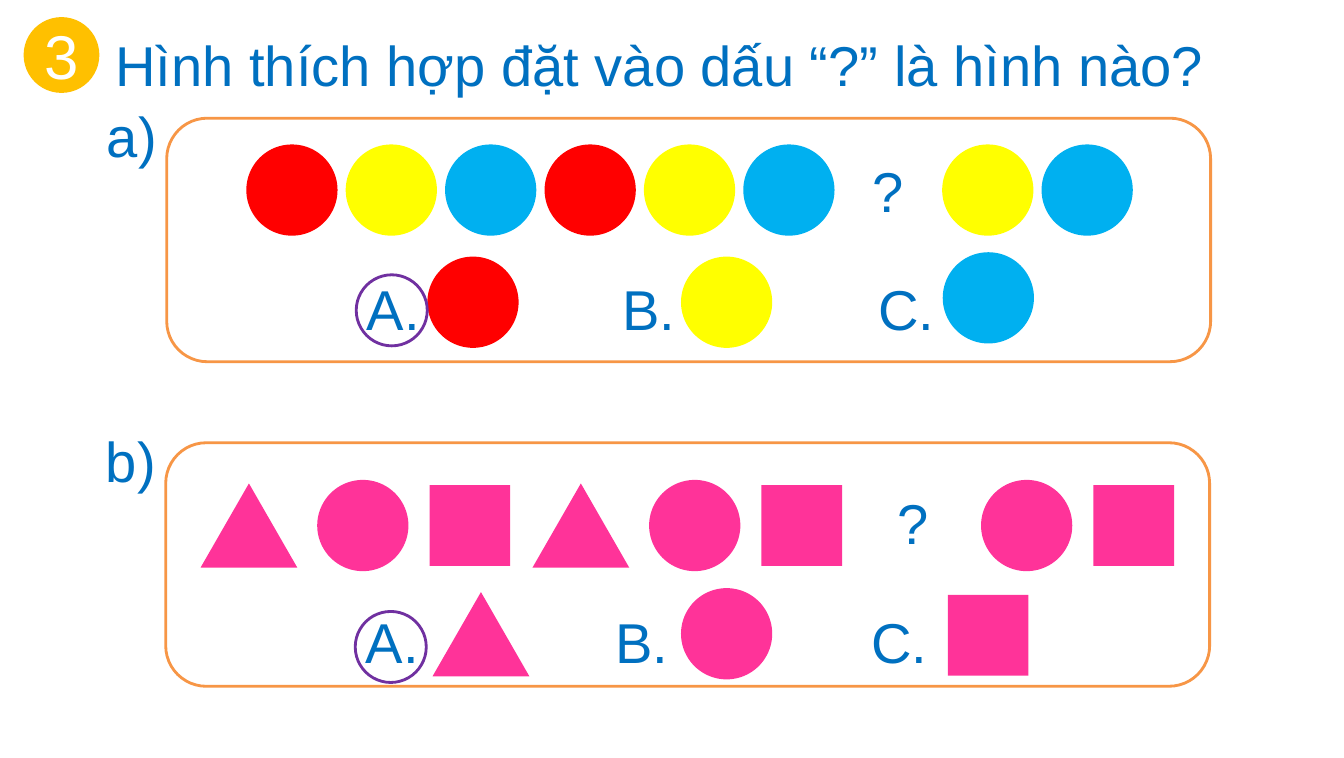
from pptx import Presentation
from pptx.dml.color import RGBColor
from pptx.enum import shapes, text
from pptx.util import Pt

BLUE, WHITE, PINK = "0070C0", "FFFFFF", "FF3399"
RED, YELLOW, SKY = "FF0000", "FFFF00", "00B0F0"
SHAPE = shapes.MSO_SHAPE
CIRCLE, TRIANGLE, SQUARE = SHAPE.OVAL, SHAPE.ISOSCELES_TRIANGLE, SHAPE.RECTANGLE
SIZES = {CIRCLE: (65, 65), TRIANGLE: (69, 60), SQUARE: (57.5, 57.5)}


def rgb(color):
    """Turn a hex string into a colour."""
    return RGBColor.from_string(color)


def add_run(p, words, size, color):
    """Add one Arial run to a paragraph."""
    r = p.add_run()
    r.text = words
    r.font.name, r.font.size = "Arial", Pt(size)
    r.font.color.rgb = rgb(color)


def add_shape(s, kind, x, y, w, h, fill=None, line=None):
    """Add a flat preset shape with optional fill and outline."""
    sp = s.shapes.add_shape(kind, Pt(x), Pt(y), Pt(w), Pt(h))
    sp.shadow.inherit = False
    if fill:
        sp.fill.solid()
        sp.fill.fore_color.rgb = rgb(fill)
    else:
        sp.fill.background()
    if line:
        sp.line.color.rgb, sp.line.width = rgb(line), Pt(2)
    else:
        sp.line.fill.background()
    return sp


def add_symbol(s, kind, color, cx, cy):
    """Add a pattern symbol centred on a point."""
    w, h = SIZES[kind]
    return add_shape(s, kind, cx - w / 2, cy - h / 2, w, h, color)


def add_centred(sp, words, size, color):
    """Write centred words inside a shape."""
    tf = sp.text_frame
    tf.vertical_anchor = text.MSO_ANCHOR.MIDDLE
    p = tf.paragraphs[0]
    p.alignment = text.PP_ALIGN.CENTER
    add_run(p, words, size, color)


def add_label(s, words, x, y, w=74):
    """Add a blue 40-point line of text."""
    tf = s.shapes.add_textbox(Pt(x), Pt(y), Pt(w), Pt(55.7)).text_frame
    tf.word_wrap = True
    p = tf.paragraphs[0]
    p.alignment = text.PP_ALIGN.JUSTIFY
    add_run(p, words, 40, BLUE)


def add_heading(s, x, y):
    """Add the numbered badge and the question."""
    badge = add_shape(s, CIRCLE, x, y, 54, 54, "FFC000")
    add_centred(badge, "3", 44, WHITE)
    add_label(s, "Hình thích hợp đặt vào dấu “?” là hình nào?", x + 58.3, y + 6, 860)


def add_panel(s, x, y, letter, symbols, centres, period, row_y, gap_y, labels, label_y,
              answers, ring_y):
    """Add a framed pattern with a missing symbol and three answers."""
    add_label(s, letter, x - 49.7, y - 15.5)
    add_shape(s, SHAPE.ROUNDED_RECTANGLE, x, y, 743.8, 173.5, line="F79646")
    for i in range(9):
        group, k = divmod(i, 3)
        cx = x + centres[k] + group * period
        if i == 6:
            add_centred(add_symbol(s, CIRCLE, None, cx, y + gap_y), "?", 40, BLUE)
        else:
            add_symbol(s, *symbols[k], cx, y + row_y)
    for words, left, symbol, (cx, cy) in zip(("A.", "B.", "C."), labels, symbols, answers):
        add_label(s, words, x + left, y + label_y)
        add_symbol(s, *symbol, x + cx, y + cy)
    add_shape(s, CIRCLE, x + 135, y + ring_y, 50.6, 50.6, line="7030A0")


def main():
    """Build the slide and save it."""
    prs = Presentation()
    prs.slide_width, prs.slide_height = Pt(957.6), Pt(540)
    s = prs.slides.add_slide(prs.slide_layouts[6])
    add_heading(s, 16.8, 12.2)
    add_panel(s, 118.8, 84.2, "a)", [(CIRCLE, c) for c in (RED, YELLOW, SKY)],
              (89.2, 160, 230.8), 212.5, 51.2, 51.2, (135.4, 317.6, 499.8), 108,
              ((218.2, 131.1), (398.9, 131.1), (585.4, 128)), 111.6)
    add_panel(s, 118.1, 315.4, "b)", [(k, PINK) for k in (TRIANGLE, CIRCLE, SQUARE)],
              (59.3, 140.4, 216.7), 236.5, 59, 56.3, (135.4, 313.2, 495.4), 113.8,
              ((224.6, 136.4), (399.6, 136.1), (586, 137.2)), 120.2)
    prs.save("out.pptx")


if __name__ == "__main__":
    main()
